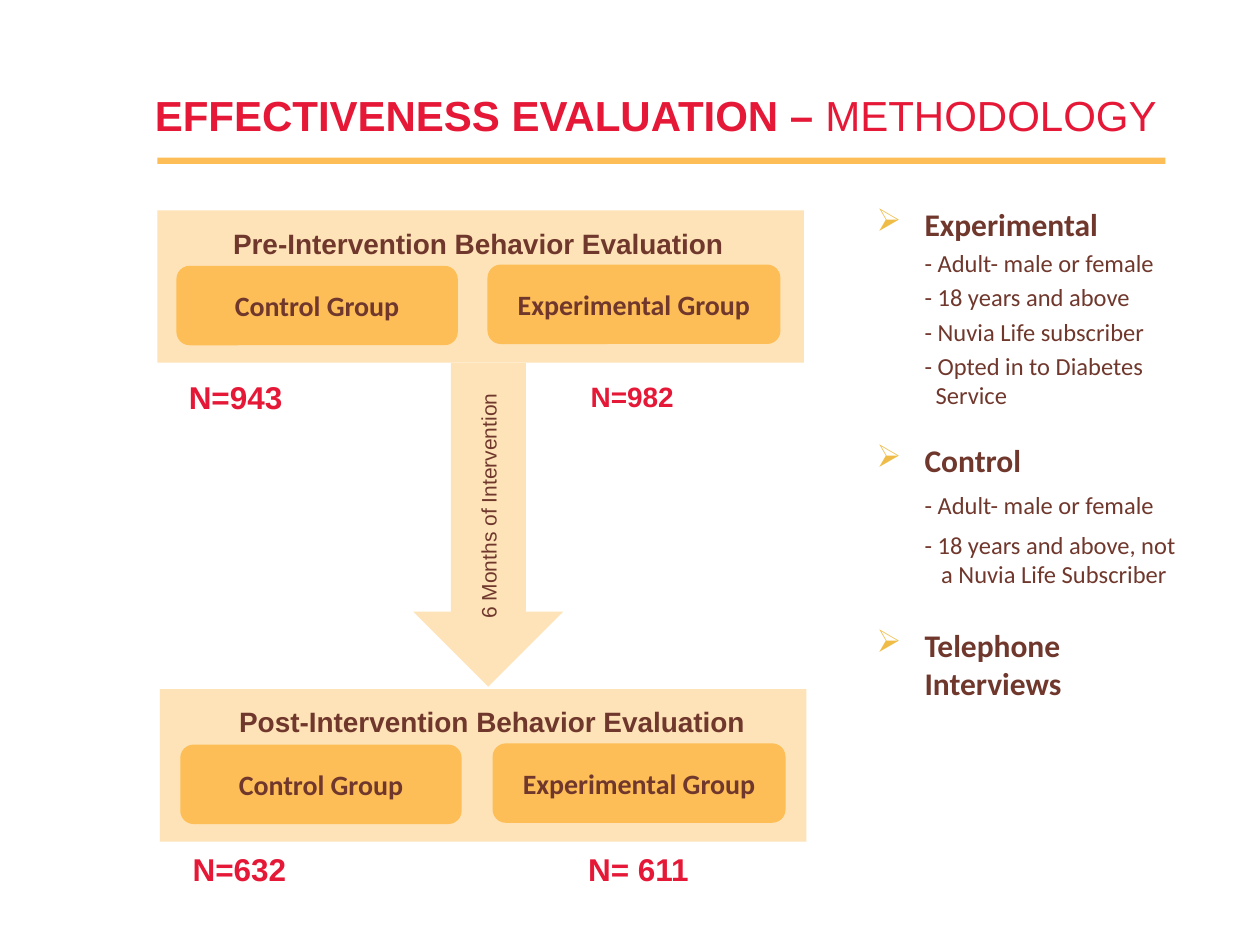
from dataclasses import dataclass

from lxml import etree
from pptx import Presentation
from pptx.dml.color import RGBColor
from pptx.enum.shapes import MSO_SHAPE
from pptx.enum.text import MSO_ANCHOR, PP_ALIGN
from pptx.oxml.ns import qn
from pptx.util import Pt

RECT = MSO_SHAPE.RECTANGLE
ROUNDED = MSO_SHAPE.ROUNDED_RECTANGLE
DOWN_ARROW = MSO_SHAPE.DOWN_ARROW
MIDDLE, TOP = MSO_ANCHOR.MIDDLE, MSO_ANCHOR.TOP
CENTER, LEFT = PP_ALIGN.CENTER, PP_ALIGN.LEFT

COLORS = {
    "red": "E51937",
    "brown": "70382D",
    "amber": "FDBE57",
    "cream": "FEE3B8",
    "bullet": "EFBD47",
}
INDENT = 27.36


@dataclass(frozen=True)
class Box:
    left: float
    top: float
    width: float
    height: float

    def lengths(self):
        return Pt(self.left), Pt(self.top), Pt(self.width), Pt(self.height)


@dataclass(frozen=True)
class Panel:
    heading: str
    left: float
    top: float
    heading_left: float
    heading_top: float
    control_left: float
    experimental_left: float


@dataclass(frozen=True)
class Count:
    text: str
    left: float
    top: float
    size: float = 18


@dataclass(frozen=True)
class Item:
    text: str
    is_head: bool = False
    before: float = 0
    after: float = 0
    hang: float = 0


PANELS = [
    Panel("Pre-Intervention Behavior Evaluation", 90, 120.2, 100.8, 126, 100.8, 278.6),
    Panel("Post-Intervention Behavior Evaluation", 91.4, 393.8, 108.7, 398.9, 103, 281.5),
]

COUNTS = [
    Count("N=943", 100.8, 212.4),
    Count("N=982", 330.5, 213.1, 16),
    Count("N=632", 103, 482.4),
    Count("N= 611", 329, 482.4),
]

ITEMS = [
    Item("Experimental", True, before=3.6),
    Item("- Adult- male or female", before=2.8),
    Item("- 18 years and above", before=2.8),
    Item("- Nuvia Life subscriber", before=2.8),
    Item("- Opted in to Diabetes\nService", before=2.8, after=18, hang=6.3),
    Item("Control", True, after=6),
    Item("- Adult- male or female", after=6),
    Item("- 18 years and above, not\na Nuvia Life Subscriber", after=18, hang=9.5),
    Item("Telephone\nInterviews", True, before=3.6),
]


def rgb(name: str) -> RGBColor:
    return RGBColor.from_string(COLORS[name])


def add_text(p, text: str, *, size: float, color: str = "brown", font: str = "Arial",
             bold: bool = False, align=LEFT):
    p.alignment = align
    for i, line in enumerate(text.split("\n")):
        if i:
            p.add_line_break()
        r = p.add_run()
        r.text = line
        r.font.size = Pt(size)
        r.font.name = font
        r.font.bold = bold
        r.font.color.rgb = rgb(color)


def add_block(s, kind, box: Box, fill: str):
    sp = s.shapes.add_shape(kind, *box.lengths())
    sp.shadow.inherit = False
    sp.fill.solid()
    sp.fill.fore_color.rgb = rgb(fill)
    sp.line.fill.background()
    sp.text_frame.word_wrap = True
    sp.text_frame.vertical_anchor = MIDDLE
    return sp


def add_box(s, box: Box):
    tf = s.shapes.add_textbox(*box.lengths()).text_frame
    tf.word_wrap = True
    tf.vertical_anchor = TOP
    return tf


def add_panel(s, panel: Panel):
    add_block(s, RECT, Box(panel.left, panel.top, 369.4, 87.1), "cream")
    groups = [
        ("Control Group", Box(panel.control_left, panel.top + 31.7, 160.8, 45.4)),
        ("Experimental Group", Box(panel.experimental_left, panel.top + 31, 167.4, 45.4)),
    ]
    for name, box in groups:
        sp = add_block(s, ROUNDED, box, "amber")
        add_text(sp.text_frame.paragraphs[0], name, size=16, font="Calibri",
                 bold=True, align=CENTER)
    tf = add_box(s, Box(panel.heading_left, panel.heading_top, 345, 25.2))
    add_text(tf.paragraphs[0], panel.heading, size=16, bold=True, align=CENTER)


def set_indent(p, left: float, first: float, bullet: str = ""):
    pPr = p._p.get_or_add_pPr()
    pPr.set("marL", str(int(Pt(left))))
    pPr.set("indent", str(int(Pt(first))))
    if bullet:
        clr = etree.SubElement(pPr, qn("a:buClr"))
        etree.SubElement(clr, qn("a:srgbClr")).set("val", COLORS["bullet"])
        etree.SubElement(pPr, qn("a:buChar")).set("char", bullet)
    else:
        etree.SubElement(pPr, qn("a:buNone"))


def add_items(s, box: Box, items: list[Item]):
    tf = add_box(s, box)
    for i, item in enumerate(items):
        p = tf.add_paragraph() if i else tf.paragraphs[0]
        p.space_before = Pt(item.before)
        p.space_after = Pt(item.after)
        if item.is_head:
            set_indent(p, INDENT, -INDENT, "➢")
        else:
            set_indent(p, INDENT + item.hang, -item.hang)
        add_text(p, item.text, size=18 if item.is_head else 14, font="Calibri",
                 bold=item.is_head)


def main():
    prs = Presentation()
    prs.slide_width, prs.slide_height = Pt(720), Pt(540)
    s = prs.slides.add_slide(prs.slide_layouts[6])

    add_block(s, RECT, Box(90, 90, 576, 3.6), "amber")
    p = add_box(s, Box(81.4, 47.5, 638.6, 54)).paragraphs[0]
    add_text(p, "EFFECTIVENESS EVALUATION – ", size=24, color="red", bold=True)
    add_text(p, "METHODOLOGY", size=24, color="red")

    for panel in PANELS:
        add_panel(s, panel)

    arrow = add_block(s, DOWN_ARROW, Box(236.2, 207.4, 85.7, 185), "cream")
    arrow.element.txBody.bodyPr.set("vert", "vert270")
    add_text(arrow.text_frame.paragraphs[0], "6 Months of Intervention", size=12,
             align=CENTER)

    for count in COUNTS:
        tf = add_box(s, Box(count.left, count.top, 100, 28))
        add_text(tf.paragraphs[0], count.text, size=count.size, color="red", bold=True)

    add_items(s, Box(493.9, 113.8, 190.1, 316.8), ITEMS)
    prs.save("out.pptx")


if __name__ == "__main__":
    main()
